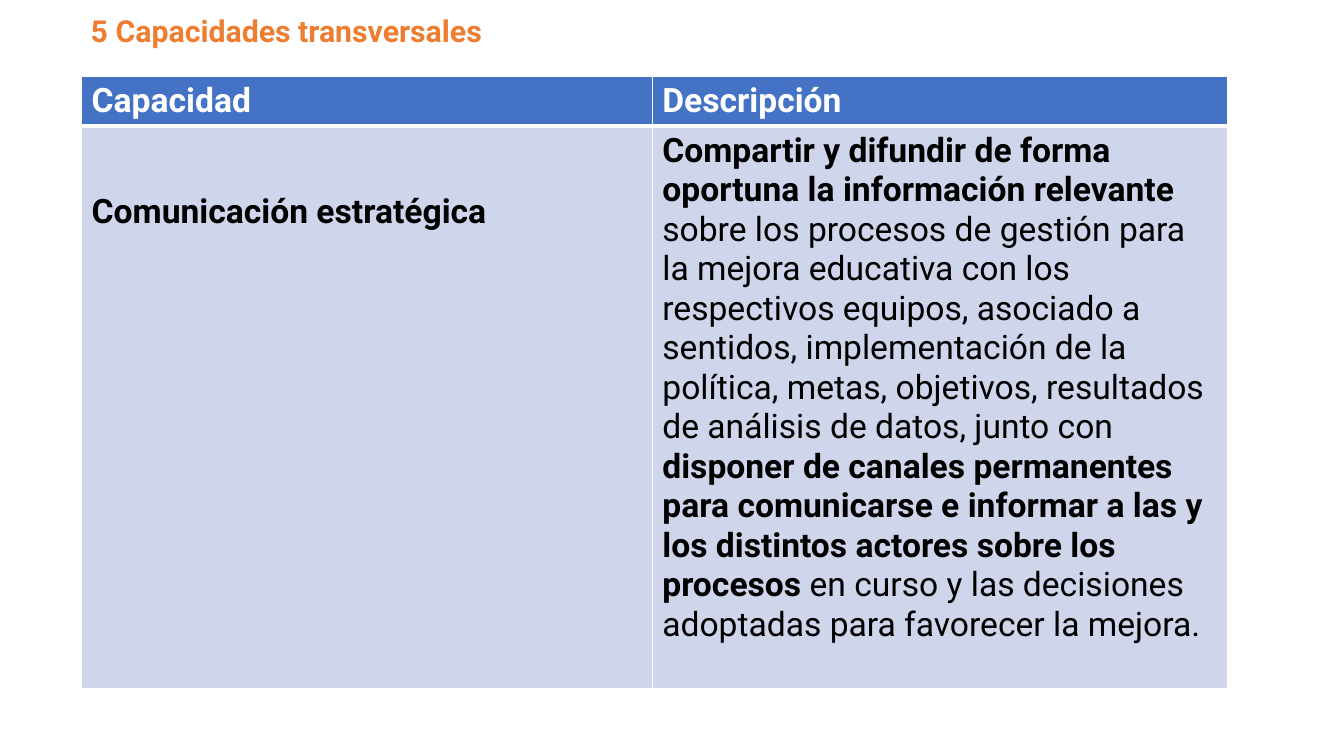
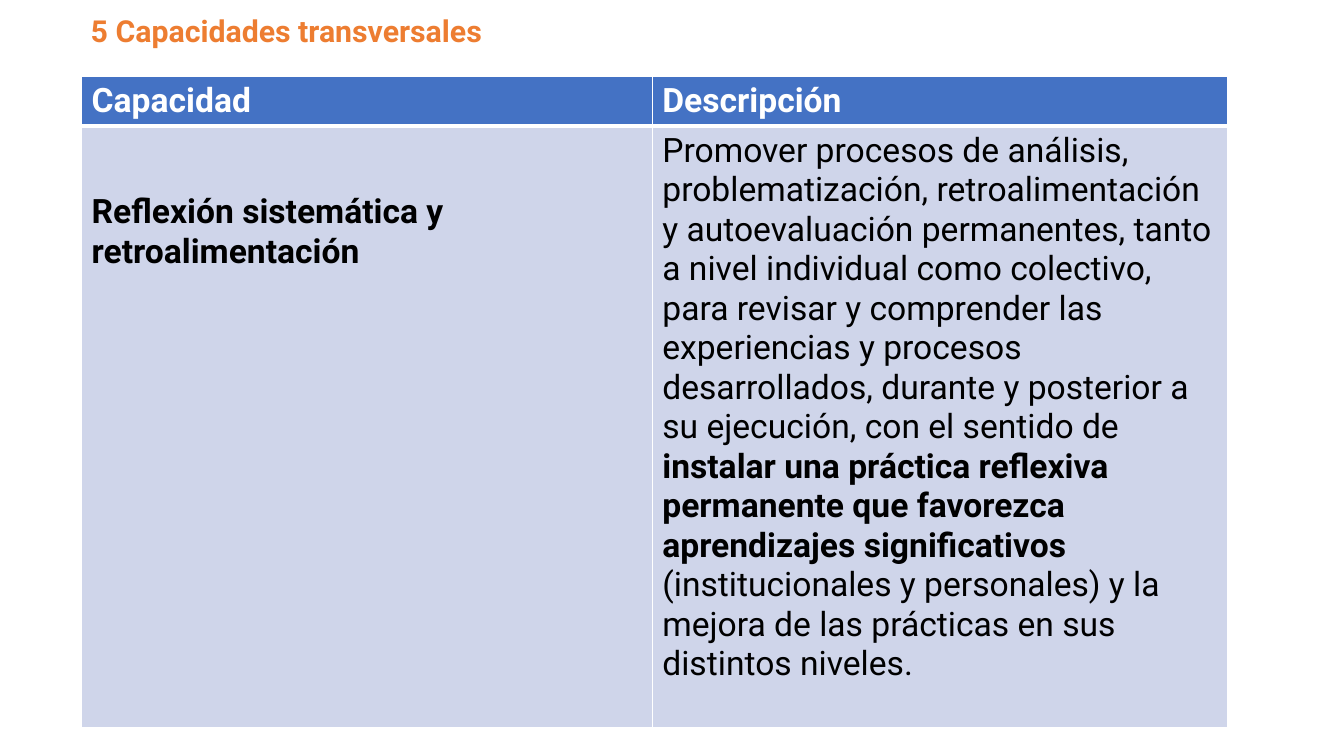
from pptx import Presentation
from pptx import util as u
from pptx.dml import color
from pptx.enum import text
from pptx.oxml import ns
from lxml import etree

ORANGE, BLUE, PALE, WHITE, BLACK = "ED7D31", "4472C4", "CFD5EA", "FFFFFF", "000000"
TITLE = "5 Capacidades transversales"
HEADINGS = ("Capacidad", "Descripción")
COLUMN_WIDTHS = (5.66, 5.71)
HEADER_HEIGHT = 0.49
TITLE_BOX = (0.8, 0.05, 11.5, 0.5)
TABLE_ORIGIN = (0.81, 0.76)
NAME_MARGIN = 0.66  # lowers the name of the capacity within its cell

# Each description is a list of (text, bold) runs
CAPACITIES = [
    {
        "name": "Comunicación estratégica",
        "height": 5.58,
        "description": [
            ("Compartir y difundir de forma oportuna la información relevante ", True),
            ("sobre los procesos de gestión para la mejora educativa con los "
             "respectivos equipos, asociado a sentidos, implementación de la "
             "política, metas, objetivos, resultados de análisis de datos, "
             "junto con ", False),
            ("disponer de canales permanentes para comunicarse e informar a las "
             "y los distintos actores sobre los procesos ", True),
            ("en curso y las decisiones adoptadas para favorecer la mejora.", False),
        ],
    },
    {
        "name": "Reflexión sistemática y retroalimentación",
        "height": 5.97,
        "description": [
            ("Promover procesos de análisis, problematización, "
             "retroalimentación y autoevaluación permanentes, tanto a nivel "
             "individual como colectivo, para revisar y comprender las "
             "experiencias y procesos desarrollados, durante y posterior a su "
             "ejecución, con el sentido de ", False),
            ("instalar una práctica reflexiva permanente que favorezca "
             "aprendizajes significativos ", True),
            ("(institucionales y personales) y la mejora de las prácticas en "
             "sus distintos niveles.", False),
        ],
    },
]


def paint(target, hex_color):
    """Give a fill a solid colour."""
    target.solid()
    target.fore_color.rgb = color.RGBColor.from_string(hex_color)


def write(frame, runs, size, hex_color):
    """Write (text, bold) runs into the first paragraph of a frame."""
    paragraph = frame.paragraphs[0]
    paragraph.alignment = text.PP_ALIGN.LEFT
    for words, bold in runs:
        run = paragraph.add_run()
        run.text = words
        font_format = {"name": "Roboto", "size": u.Pt(size), "bold": bold}
        for key, value in font_format.items():
            setattr(run.font, key, value)
        paint(run.font.fill, hex_color)


def border(cell, widths):
    """Draw white borders; widths maps each side to points."""
    properties = cell._tc.get_or_add_tcPr()
    for side, width in widths.items():
        line = etree.SubElement(properties, ns.qn(f"a:ln{side}"), w=str(u.Pt(width)))
        fill = etree.SubElement(line, ns.qn("a:solidFill"))
        etree.SubElement(fill, ns.qn("a:srgbClr"), val=WHITE)


def fill_cell(cell, runs, background, ink, widths):
    border(cell, widths)
    paint(cell.fill, background)
    write(cell.text_frame, runs, 24, ink)


def add_title(slide, box):
    title = slide.shapes.title
    for side, length in zip(("left", "top", "width", "height"), box):
        setattr(title, side, u.Inches(length))
    title.text_frame.vertical_anchor = text.MSO_ANCHOR.MIDDLE
    write(title.text_frame, [(TITLE, True)], 21.6, ORANGE)


def add_capacity_table(slide, origin, capacity):
    left, top = origin
    row_heights = (HEADER_HEIGHT, capacity["height"])
    size = (sum(COLUMN_WIDTHS), sum(row_heights))
    table = slide.shapes.add_table(
        2, 2, *(u.Inches(n) for n in (left, top, *size))).table
    for column, width in zip(table.columns, COLUMN_WIDTHS):
        column.width = u.Inches(width)
    for row, height in zip(table.rows, row_heights):
        row.height = u.Inches(height)

    # Header row
    for index, heading in enumerate(HEADINGS):
        fill_cell(table.cell(0, index), [(heading, True)], BLUE, WHITE,
                  {"L": 1, "R": 1, "T": 1, "B": 3})

    # Capacity and its description
    body = ([(capacity["name"], True)], capacity["description"])
    for index, runs in enumerate(body):
        fill_cell(table.cell(1, index), runs, PALE, BLACK,
                  {"L": 1, "R": 1, "T": 3, "B": 1})
    table.cell(1, 0).margin_top = u.Inches(NAME_MARGIN)


def main():
    deck = Presentation()
    deck.slide_width, deck.slide_height = u.Inches(13.33), u.Inches(7.5)
    title_only = deck.slide_layouts[5]
    for capacity in CAPACITIES:
        slide = deck.slides.add_slide(title_only)
        add_title(slide, TITLE_BOX)
        add_capacity_table(slide, TABLE_ORIGIN, capacity)
    deck.save("out.pptx")


if __name__ == "__main__":
    main()
